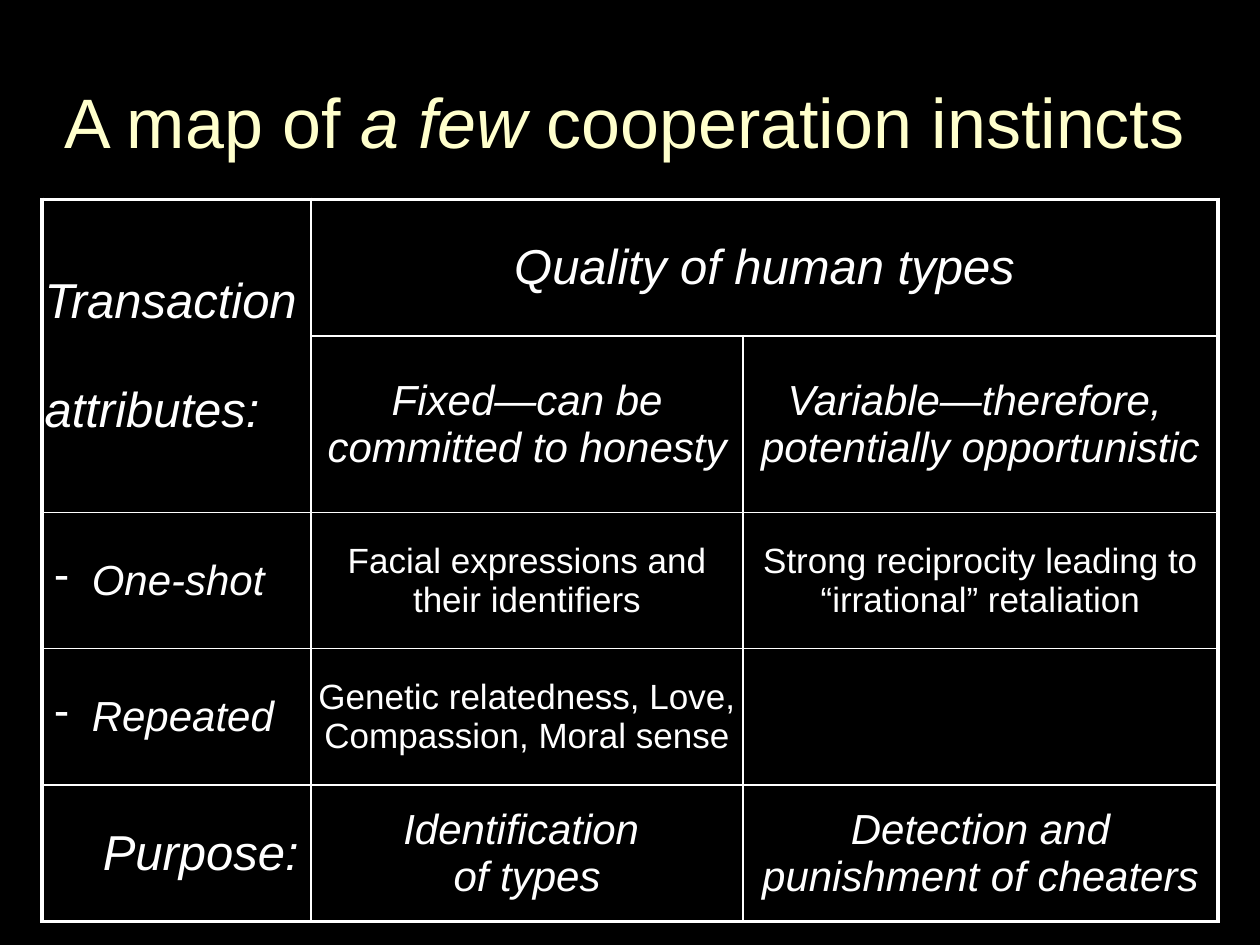
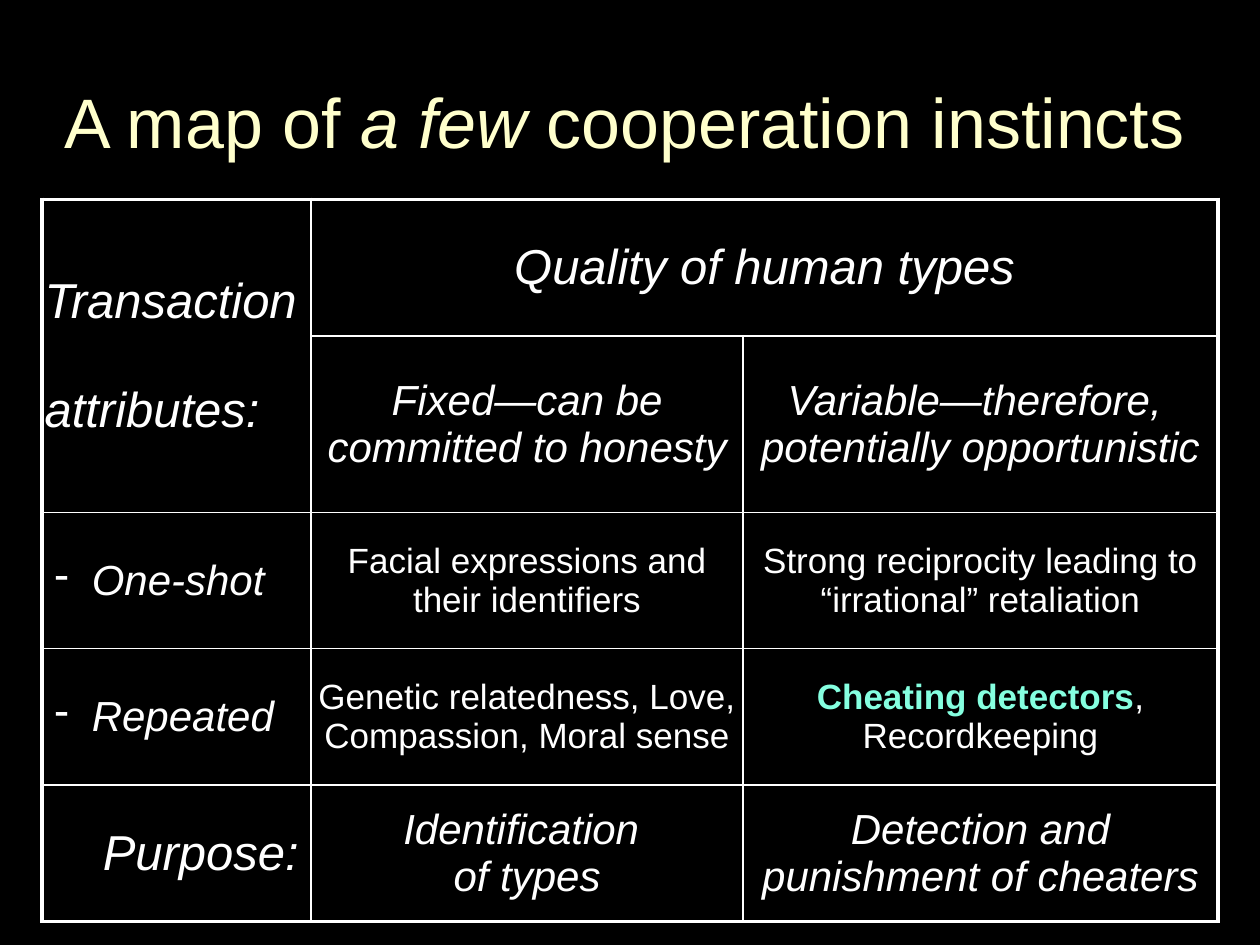
"""Build two slides that map cooperation instincts in a table."""
import lxml.etree
import pptx
import pptx.dml.color
import pptx.enum.text
import pptx.oxml.ns
import pptx.util

Cm = pptx.util.Cm
Pt = pptx.util.Pt
Align = pptx.enum.text.PP_ALIGN
Middle = pptx.enum.text.MSO_ANCHOR.MIDDLE

COLOURS = {"ground": "000000", "title": "FFFFCC", "text": "FFFFFF", "accent": "85FFE0"}
COLUMN_WIDTHS = [5.42, 8.71, 9.57]
ROW_HEIGHT = 2.75
ROW_COUNT = 5
MERGES = [((0, 0), (1, 0)), ((0, 1), (0, 2))]

TITLE = [("A map of ", {}), ("a few", {"italic": True}), (" cooperation instincts", {})]
HEADING = {"size": 28}
LABEL = {"size": 24}
INSTINCT = {"size": 20, "italic": False}
LEFT = {"align": Align.LEFT}
DASH = {**LABEL, **LEFT, "dash": True}

INSTINCTS = {
    (0, 0): ("Transaction \vattributes:", {**HEADING, **LEFT, "inset": 0.05}),
    (0, 1): ("Quality of human types", {**HEADING, "inset": 0.1}),
    (1, 1): ("Fixed—can be\vcommitted to honesty", {**LABEL, "inset": 0.1}),
    (1, 2): ("Variable—therefore, \vpotentially opportunistic", LABEL),
    (2, 0): ("One-shot", DASH),
    (2, 1): ("Facial expressions and their identifiers", {**INSTINCT, "inset": 0.1}),
    (2, 2): ("Strong reciprocity leading to “irrational” retaliation", INSTINCT),
    (3, 0): ("Repeated", DASH),
    (3, 1): ("Genetic relatedness, Love, Compassion, Moral sense", {**INSTINCT, "inset": 0.1}),
    (4, 0): ("Purpose:", {**HEADING, "align": Align.RIGHT}),
    (4, 1): ("Identification \vof types", {**LABEL, "inset": 0.1}),
    (4, 2): ("Detection and punishment of cheaters", LABEL),
}
CHEATING = [("Cheating detectors", {"bold": True, "colour": "accent"}), (", Recordkeeping", {})]


class Deck:
    def __init__(self):
        self.deck = pptx.Presentation()
        self.deck.slide_width, self.deck.slide_height = Cm(25.4), Cm(19.05)
        self.fill(self.deck.slide_master.background.fill, "ground")
        self.page = None

    def colour(self, name):
        return pptx.dml.color.RGBColor.from_string(COLOURS[name])

    def fill(self, target, name):
        target.solid()
        target.fore_color.rgb = self.colour(name)

    def add_text(self, para, content, size, colour="text", align=Align.CENTER, italic=False):
        para.alignment = align
        para.font.name, para.font.size, para.font.italic = "Arial", Pt(size), italic
        para.font.color.rgb = self.colour(colour)
        if isinstance(content, str):
            para.text = content
            return
        for text, style in content:
            span = para.add_run()
            span.text = text
            if "italic" in style:
                span.font.italic = style["italic"]
            if "bold" in style:
                span.font.bold = style["bold"]
            if "colour" in style:
                span.font.color.rgb = self.colour(style["colour"])

    def add_page(self, title):
        self.page = self.deck.slides.add_slide(self.deck.slide_layouts[5])
        box = self.page.shapes.title
        box.left, box.top, box.width, box.height = Cm(0.42), Cm(1.06), Cm(24.34), Cm(2.75)
        frame = box.text_frame
        frame.auto_size = pptx.enum.text.MSO_AUTO_SIZE.NONE
        frame.vertical_anchor = Middle
        self.add_text(frame.paragraphs[0], title, 40, "title")

    def add_dash(self, para):
        properties = para._p.get_or_add_pPr()
        properties.set("marL", str(Cm(0.75)))
        properties.set("indent", str(-Cm(0.75)))
        bullet = lxml.etree.SubElement(properties, pptx.oxml.ns.qn("a:buChar"))
        bullet.set("char", "-")

    def add_borders(self, cell, row, column):
        outer = {
            "lnL": column == 0,
            "lnR": column + cell.span_width == len(COLUMN_WIDTHS),
            "lnT": row == 0,
            "lnB": row + cell.span_height == ROW_COUNT,
        }
        qn = pptx.oxml.ns.qn
        for side, is_outer in outer.items():
            line = lxml.etree.SubElement(cell._tc.get_or_add_tcPr(), qn("a:" + side))
            line.set("w", str(Pt(2.25 if is_outer else 1)))
            solid = lxml.etree.SubElement(line, qn("a:solidFill"))
            lxml.etree.SubElement(solid, qn("a:srgbClr")).set("val", COLOURS["text"])

    def fill_cell(self, cell, content, size, align=Align.CENTER, italic=True, inset=0.25, dash=False):
        cell.vertical_anchor = Middle
        cell.margin_left = cell.margin_right = Cm(inset)
        para = cell.text_frame.paragraphs[0]
        if dash:
            self.add_dash(para)
        self.add_text(para, content, size, align=align, italic=italic)

    def add_table(self, entries):
        table = self.page.shapes.add_table(
            ROW_COUNT, len(COLUMN_WIDTHS), Cm(0.85), Cm(4.02),
            Cm(sum(COLUMN_WIDTHS)), Cm(ROW_COUNT * ROW_HEIGHT)).table
        table.first_row = table.horz_banding = False
        for column, width in zip(table.columns, COLUMN_WIDTHS):
            column.width = Cm(width)
        for row in table.rows:
            row.height = Cm(ROW_HEIGHT)
        for first, last in MERGES:
            table.cell(*first).merge(table.cell(*last))
        for row in range(ROW_COUNT):
            for column in range(len(COLUMN_WIDTHS)):
                cell = table.cell(row, column)
                if not cell.is_spanned:
                    self.add_borders(cell, row, column)
                self.fill(cell.fill, "ground")
                if (row, column) in entries:
                    content, style = entries[row, column]
                    self.fill_cell(cell, content, **style)


def main():
    deck = Deck()
    for entries in (INSTINCTS, {**INSTINCTS, (3, 2): (CHEATING, INSTINCT)}):
        deck.add_page(TITLE)
        deck.add_table(entries)
    deck.deck.save("out.pptx")


if __name__ == "__main__":
    main()
